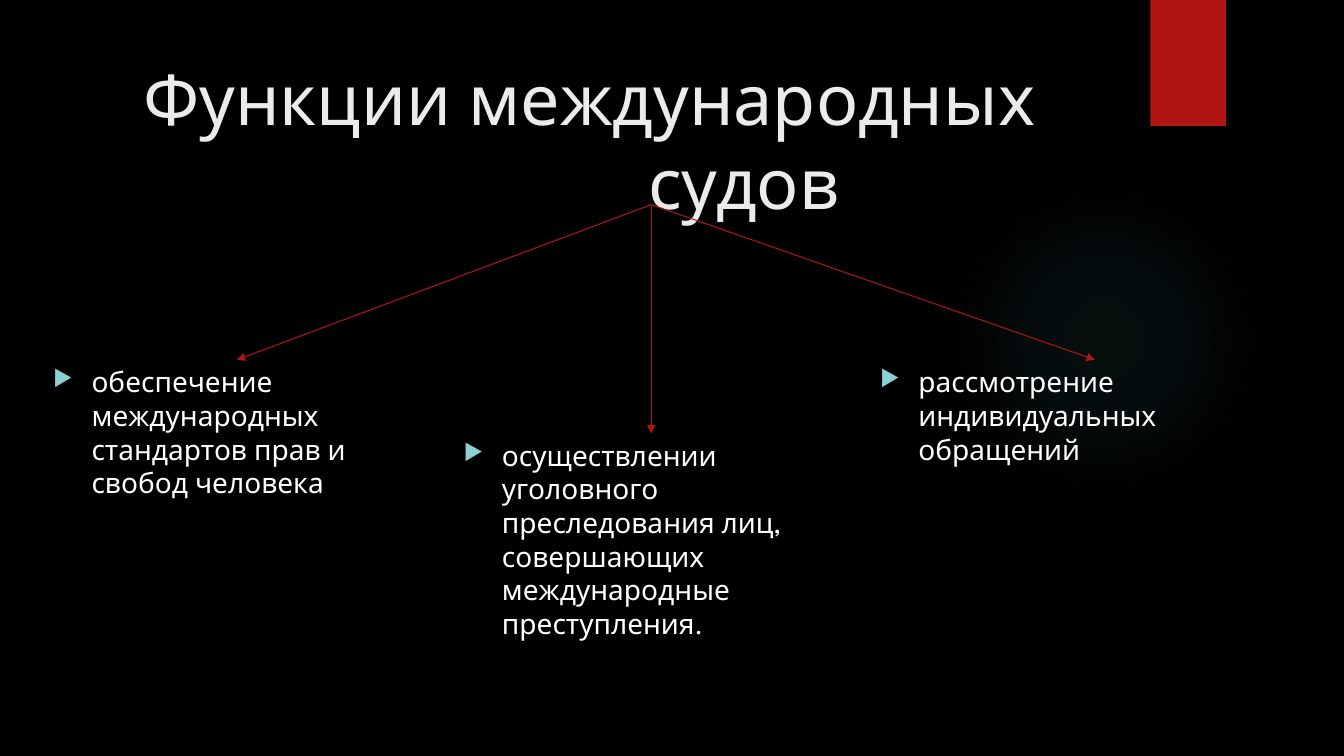
"""Build a slide on the functions of international courts."""
import lxml.etree
import pptx
import pptx.dml.color
import pptx.enum.shapes
import pptx.oxml
import pptx.oxml.ns
import pptx.util

WIDTH, HEIGHT = 13.33, 7.5
FONT = "League Spartan"
RED, GLOW, BULLET = "B01513", "50B9C1", "8AD0D6"
TITLE = [("Функции международных", 0), ("судов", 5.01)]
TITLE_BOX = (1.32, 0.5, 10.29, 1.53)
FORK = (6.46, 2.03)
FUNCTIONS = [
    ("осуществлении уголовного преследования лиц, совершающих международные преступления.",
     (4.5, 4.3, 3.92, 2.14)),
    ("обеспечение международных стандартов прав и свобод человека",
     (0.43, 3.57, 3.84, 1.46)),
    ("рассмотрение индивидуальных обращений",
     (8.63, 3.57, 4.46, 1.06)),
]
GLOW_STOPS = [(0, 7), (36, 6), (69, 0)]
NS = pptx.oxml.ns.nsdecls("a")


def color(value):
    return pptx.dml.color.RGBColor.from_string(value)


def inches(values):
    return [pptx.util.Inches(value) for value in values]


def add_shape(page, kind, place):
    shape = page.shapes.add_shape(kind, *inches(place))
    shape.shadow.inherit = False
    shape.line.fill.background()
    return shape


def add_glow(page, place):
    circle = add_shape(page, pptx.enum.shapes.MSO_SHAPE.OVAL, place)
    circle.fill.gradient()
    stops = "".join(
        f'<a:gs pos="{position * 1000}"><a:srgbClr val="{GLOW}">'
        f'<a:alpha val="{alpha * 1000}"/></a:srgbClr></a:gs>'
        for position, alpha in GLOW_STOPS)
    gradient = pptx.oxml.parse_xml(
        f'<a:gradFill {NS} rotWithShape="1"><a:gsLst>{stops}</a:gsLst><a:path path="circle">'
        '<a:fillToRect l="50000" t="50000" r="50000" b="50000"/></a:path></a:gradFill>')
    properties = circle.element.spPr
    properties.replace(properties.find(pptx.oxml.ns.qn("a:gradFill")), gradient)


def add_frame(page, place):
    frame = page.shapes.add_textbox(*inches(place)).text_frame
    frame.word_wrap = True
    return frame


def add_span(para, text, size, value):
    span = para.add_run()
    span.text = text
    span.font.name = FONT
    span.font.size = pptx.util.Pt(size)
    span.font.color.rgb = color(value)


def indent(para, left, first=0):
    properties = para._p.get_or_add_pPr()
    properties.set("marL", str(pptx.util.Inches(left)))
    properties.set("indent", str(pptx.util.Inches(first)))
    return properties


def add_title(page):
    frame = add_frame(page, TITLE_BOX)
    for number, (text, left) in enumerate(TITLE):
        para = frame.add_paragraph() if number else frame.paragraphs[0]
        indent(para, left)
        add_span(para, text, 50, "EBEBEB")


def add_function(page, text, place):
    para = add_frame(page, place).paragraphs[0]
    properties = indent(para, 0.38, -0.38)
    for mark in (f'<a:buClr {NS}><a:srgbClr val="{BULLET}"/></a:buClr>',
                 f'<a:buSzPct {NS} val="80000"/>',
                 f'<a:buChar {NS} char="▶"/>'):
        properties.append(pptx.oxml.parse_xml(mark))
    add_span(para, text, 20, "FFFFFF")


def add_arrow(page, place):
    left, top, width, _ = place
    line = page.shapes.add_connector(
        pptx.enum.shapes.MSO_CONNECTOR.STRAIGHT,
        *inches((*FORK, left + width / 2, top)))
    line.line.color.rgb = color(RED)
    line.line.width = pptx.util.Pt(0.75)
    qn = pptx.oxml.ns.qn
    lxml.etree.SubElement(line.line._get_or_add_ln(), qn("a:tailEnd"), type="triangle")
    lxml.etree.SubElement(line.element.spPr, qn("a:effectLst"))


def main():
    deck = pptx.Presentation()
    deck.slide_width, deck.slide_height = inches((WIDTH, HEIGHT))
    page = deck.slides.add_slide(deck.slide_layouts[6])
    page.background.fill.solid()
    page.background.fill.fore_color.rgb = color("000000")
    add_glow(page, (9.41, 1.83, 3.08, 3.08))
    ribbon = add_shape(page, pptx.enum.shapes.MSO_SHAPE.RECTANGLE, (11.41, 0, 0.75, HEIGHT / 6))
    ribbon.fill.solid()
    ribbon.fill.fore_color.rgb = color(RED)
    add_title(page)
    for text, place in FUNCTIONS:
        add_function(page, text, place)
    for _, place in FUNCTIONS:
        add_arrow(page, place)
    deck.save("out.pptx")


if __name__ == "__main__":
    main()
